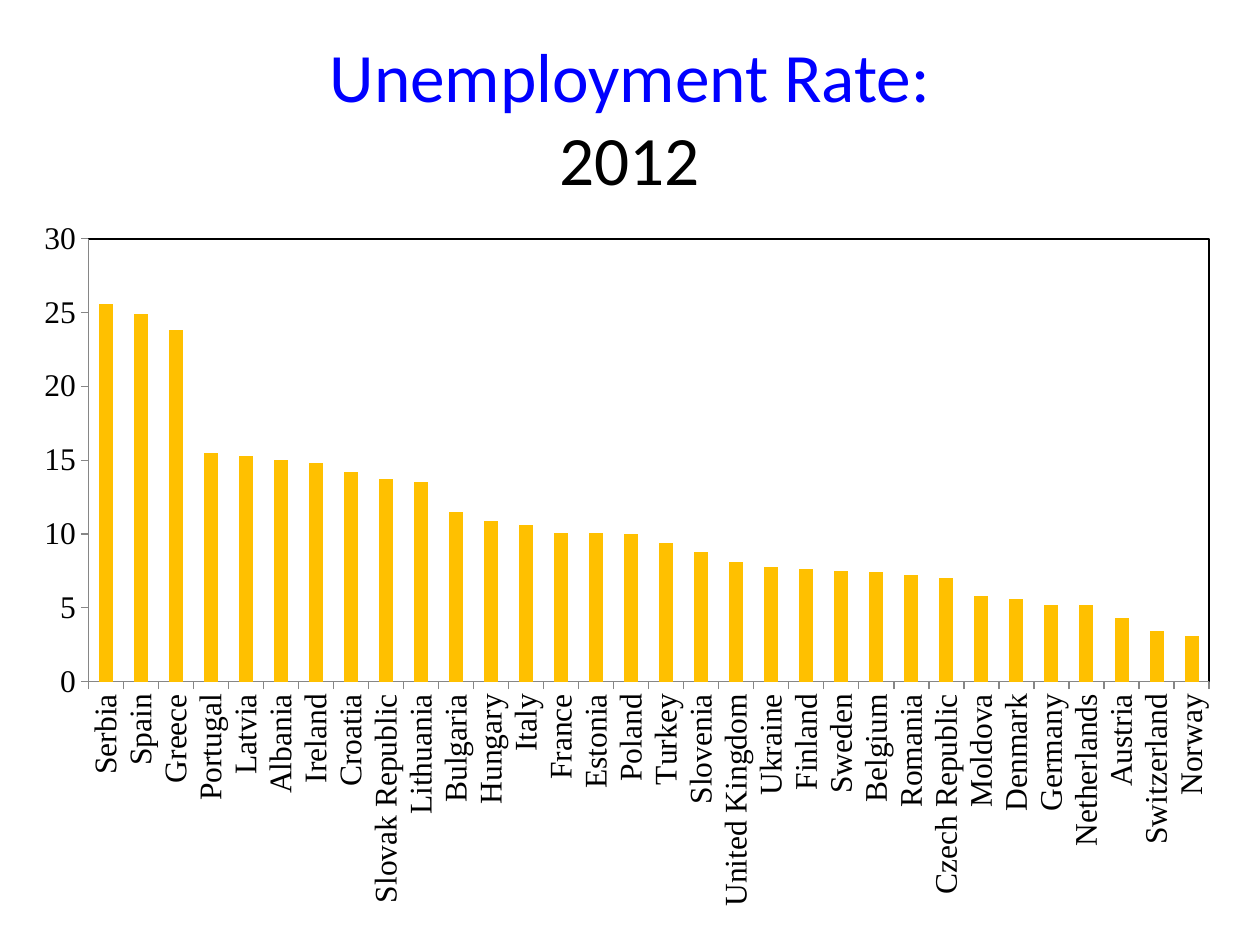
from lxml import etree
from pptx import Presentation
from pptx.chart.data import CategoryChartData
from pptx.dml.color import RGBColor
from pptx.enum.chart import XL_CHART_TYPE, XL_TICK_MARK
from pptx.enum.text import MSO_ANCHOR, PP_ALIGN
from pptx.oxml import parse_xml
from pptx.oxml.ns import nsdecls, qn
from pptx.util import Cm, Pt

COLUMNS = XL_CHART_TYPE.COLUMN_CLUSTERED
OUTSIDE = XL_TICK_MARK.OUTSIDE
MIDDLE = MSO_ANCHOR.MIDDLE
CENTER = PP_ALIGN.CENTER

# Content
TITLE_LINES = [("Unemployment Rate:", "0000FF"), ("2012", "000000")]
UNEMPLOYMENT = [
    ("Serbia", 25.6), ("Spain", 24.9), ("Greece", 23.8), ("Portugal", 15.5),
    ("Latvia", 15.3), ("Albania", 15), ("Ireland", 14.8), ("Croatia", 14.2),
    ("Slovak Republic", 13.7), ("Lithuania", 13.5), ("Bulgaria", 11.5),
    ("Hungary", 10.9), ("Italy", 10.6), ("France", 10.1), ("Estonia", 10.1),
    ("Poland", 10), ("Turkey", 9.4), ("Slovenia", 8.8),
    ("United Kingdom", 8.1), ("Ukraine", 7.8), ("Finland", 7.6),
    ("Sweden", 7.5), ("Belgium", 7.4), ("Romania", 7.2),
    ("Czech Republic", 7), ("Moldova", 5.8), ("Denmark", 5.6),
    ("Germany", 5.2), ("Netherlands", 5.2), ("Austria", 4.3),
    ("Switzerland", 3.4), ("Norway", 3.1),
]
PLOT_LAYOUT = {"x": 0.055, "y": 0.04, "w": 0.92, "h": 0.62}


def color(value):
    return RGBColor.from_string(value)


def add_title(slide):
    shape = slide.shapes.add_textbox(Cm(1.27), Cm(0.76), Cm(22.86), Cm(3.18))
    frame = shape.text_frame
    frame.word_wrap = True
    frame.vertical_anchor = MIDDLE
    paragraph = frame.paragraphs[0]
    paragraph.alignment = CENTER
    for index, (text, text_color) in enumerate(TITLE_LINES):
        if index:
            paragraph.add_line_break()
        run = paragraph.add_run()
        run.text = text
        run.font.name = "Calibri"
        run.font.size = Pt(39.6)
        run.font.color.rgb = color(text_color)


def frame_plot_area(chart):
    """Fix the inner plot position and give it a thin black border."""
    plot_area = chart._chartSpace.find(".//" + qn("c:plotArea"))
    for layout in plot_area.findall(qn("c:layout")):
        plot_area.remove(layout)
    layout = parse_xml(f"<c:layout {nsdecls('c')}><c:manualLayout/></c:layout>")
    settings = {"layoutTarget": "inner", "xMode": "edge", "yMode": "edge", **PLOT_LAYOUT}
    for name, value in settings.items():
        etree.SubElement(layout[0], qn(f"c:{name}")).set("val", str(value))
    plot_area.insert(0, layout)
    plot_area.append(parse_xml(
        f"<c:spPr {nsdecls('c', 'a')}><a:noFill/><a:ln w='9525'><a:solidFill>"
        "<a:srgbClr val='000000'/></a:solidFill></a:ln></c:spPr>"))


def add_unemployment_chart(slide):
    countries, rates = zip(*UNEMPLOYMENT)
    data = CategoryChartData()
    data.categories = countries
    data.add_series("Series 1", rates)
    chart = slide.shapes.add_chart(
        COLUMNS, Cm(0.43), Cm(4.24), Cm(24.56), Cm(14.4), data).chart
    chart.has_legend = False
    chart.has_title = False
    chart.font.name = "Times New Roman"
    chart.font.size = Pt(18)
    chart.font.color.rgb = color("000000")

    # Columns
    plot = chart.plots[0]
    plot.gap_width = 150
    plot.vary_by_categories = False
    fill = plot.series[0].format.fill
    fill.solid()
    fill.fore_color.rgb = color("FFC000")

    # Axes
    for axis in (chart.category_axis, chart.value_axis):
        axis.has_major_gridlines = False
        axis.major_tick_mark = OUTSIDE
        axis.format.line.color.rgb = color("868686")
        axis.format.line.width = Pt(0.75)
        axis.tick_labels.font.size = Pt(18)
    chart.value_axis.minimum_scale = 0
    chart.value_axis.maximum_scale = 30
    chart.value_axis.major_unit = 5
    label_body = chart.category_axis._element.find(".//" + qn("a:bodyPr"))
    label_body.set("rot", "-5400000")
    label_body.set("vert", "horz")

    frame_plot_area(chart)


def main():
    presentation = Presentation()
    presentation.slide_width = Cm(25.4)
    presentation.slide_height = Cm(19.05)
    slide = presentation.slides.add_slide(presentation.slide_layouts[6])
    add_title(slide)
    add_unemployment_chart(slide)
    presentation.save("out.pptx")


if __name__ == "__main__":
    main()
